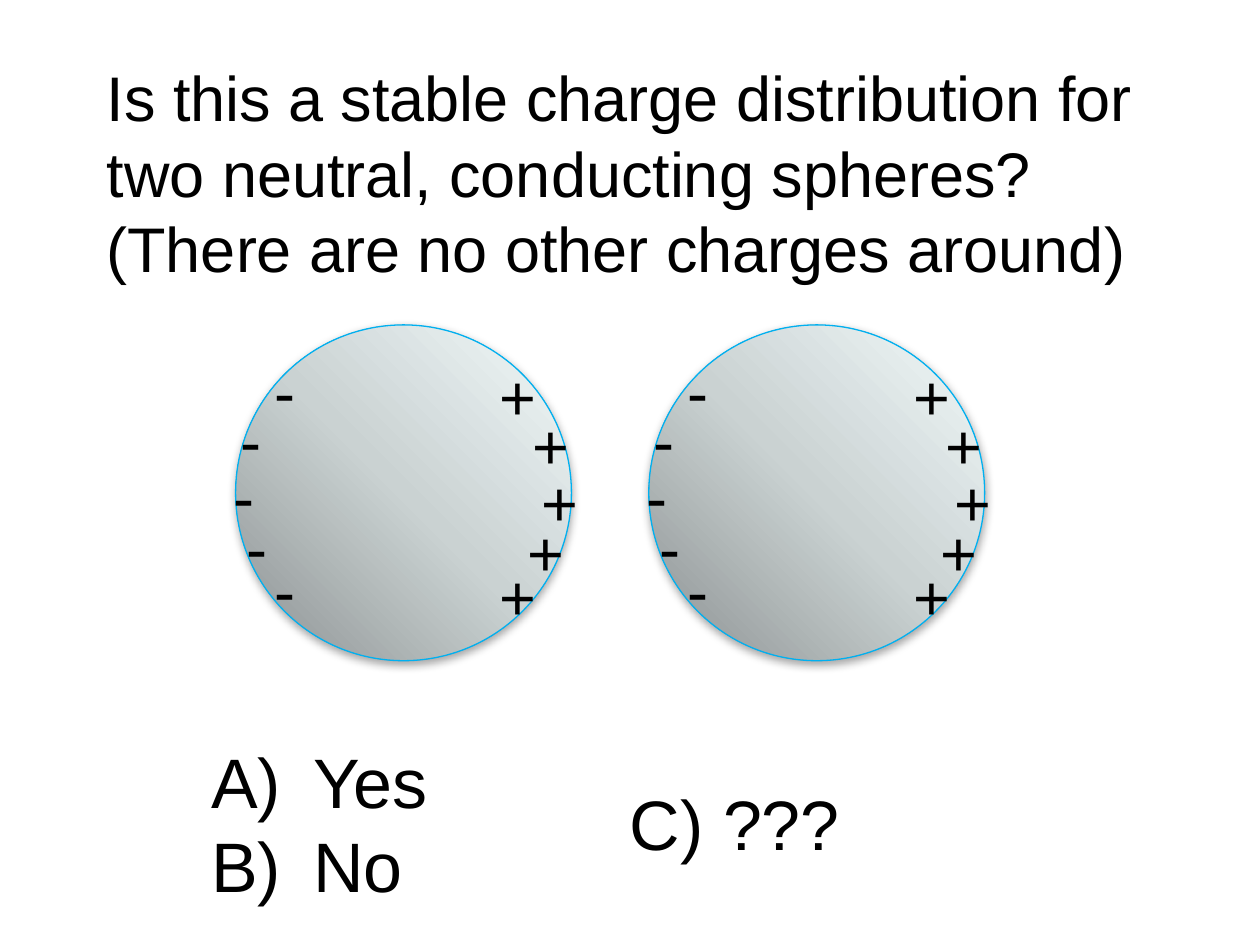
"""Build a quiz slide about the charge distribution on two conducting spheres."""
from pptx import Presentation
from pptx.dml.color import RGBColor
from pptx.enum.shapes import MSO_SHAPE
from pptx.enum.text import MSO_AUTO_SIZE
from pptx.oxml import parse_xml
from pptx.oxml.ns import nsdecls, qn
from pptx.util import Cm, Pt

OVAL = MSO_SHAPE.OVAL
GROW = MSO_AUTO_SIZE.SHAPE_TO_FIT_TEXT
BLACK = RGBColor(0x00, 0x00, 0x00)
SKY = RGBColor(0x00, 0xB0, 0xF0)
METAL = [
    (0, RGBColor(0x8C, 0x91, 0x92)),
    (50, RGBColor(0xCA, 0xD2, 0xD2)),
    (100, RGBColor(0xF1, 0xF9, 0xFA)),
]

QUESTION = (
    "Is this a stable charge distribution for two neutral, conducting "
    "spheres? (There are no other charges around)"
)
ANSWERS = ["Yes", "No"]
UNSURE = "C) ???"
HANGING = Cm(2.06)

SPHERE_LEFTS = [4.75, 13.08]
SPHERE_TOP = 6.55
DIAMETER = 6.77
CHARGES = [
    {"sign": "+", "width": 1.27, "offsets": [
        (5.08, 0.53), (5.74, 1.52), (5.92, 2.67), (5.64, 3.68), (5.08, 4.57)]},
    {"sign": "-", "width": 0.94, "offsets": [
        (0.53, 0.43), (-0.15, 1.42), (-0.3, 2.55), (-0.03, 3.58), (0.53, 4.45)]},
]


def add_text(shapes, place, lines, size=36, wrap=False):
    box = shapes.add_textbox(*map(Cm, place))
    frame = box.text_frame
    frame.word_wrap = wrap
    frame.auto_size = GROW
    style = {"name": "Arial", "size": Pt(size)}
    for number, line in enumerate(lines):
        para = frame.add_paragraph() if number else frame.paragraphs[0]
        span = para.add_run()
        span.text = line
        for key, value in style.items():
            setattr(span.font, key, value)
        span.font.color.rgb = BLACK
    return box


def hang(box, lettered=False):
    for para in box.text_frame.paragraphs:
        settings = para._p.get_or_add_pPr()
        settings.set("marL", str(HANGING))
        settings.set("indent", str(-HANGING))
        if lettered:
            settings.append(parse_xml(
                f'<a:buFont {nsdecls("a")} typeface="Arial"/>'))
            settings.append(parse_xml(
                f'<a:buAutoNum {nsdecls("a")} type="alphaUcParenR"/>'))


def add_sphere(shapes, left):
    sphere = shapes.add_shape(OVAL, *map(Cm, (left, SPHERE_TOP, DIAMETER, DIAMETER)))
    sphere.line.color.rgb = SKY
    sphere.line.width = Pt(0.75)
    sphere.fill.gradient()
    sphere.fill.gradient_angle = 45
    stops = sphere._element.spPr.find(".//" + qn("a:gsLst"))
    for stop in list(stops):
        stops.remove(stop)
    for percent, color in METAL:
        stops.append(parse_xml(
            f'<a:gs {nsdecls("a")} pos="{percent * 1000}">'
            f'<a:srgbClr val="{color}"/></a:gs>'))
    sphere.shadow.inherit = False
    effects = sphere._element.spPr.find(qn("a:effectLst"))
    effects.append(parse_xml(
        f'<a:outerShdw {nsdecls("a")} blurRad="{Pt(5)}" dist="{Pt(1.8)}" '
        f'dir="5400000" rotWithShape="0"><a:srgbClr val="{BLACK}">'
        '<a:alpha val="35000"/></a:srgbClr></a:outerShdw>'))


def main():
    deck = Presentation()
    deck.slide_width, deck.slide_height = Cm(25.4), Cm(19.05)
    page = deck.slides.add_slide(deck.slide_layouts[6])
    add_text(page.shapes, (1.9, 1.06, 22.02, 4.87), [QUESTION], wrap=True)
    for left in SPHERE_LEFTS:
        group = page.shapes.add_group_shape()
        add_sphere(group.shapes, left)
        for charge in CHARGES:
            for right, down in charge["offsets"]:
                place = (left + right, SPHERE_TOP + down, charge["width"], 1.8)
                add_text(group.shapes, place, [charge["sign"]])
    hang(add_text(page.shapes, (4.01, 14.76, 4.93, 3.68), ANSWERS, 40), lettered=True)
    hang(add_text(page.shapes, (12.45, 15.6, 4.8, 1.96), [UNSURE], 40))
    deck.save("out.pptx")


if __name__ == "__main__":
    main()
